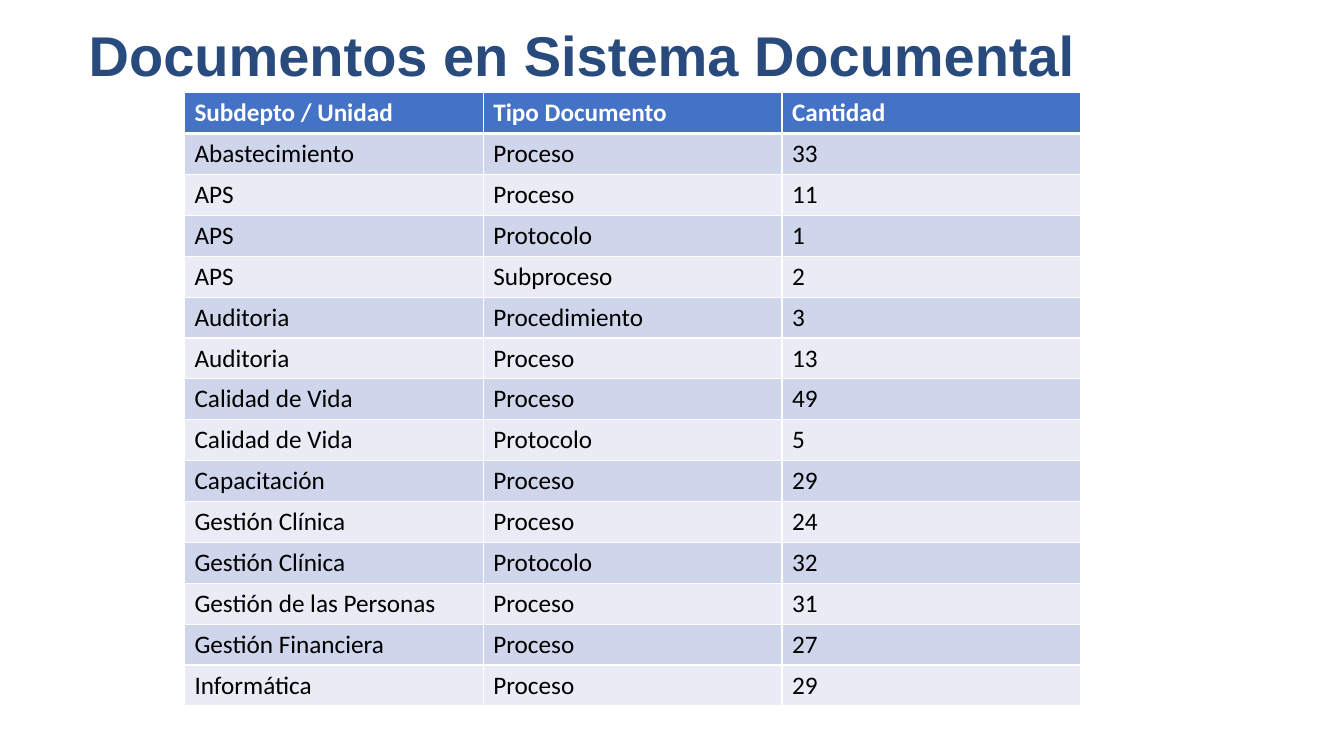
"""Build a slide with a table of documents per unit and type."""
from lxml import etree
from pptx import Presentation
from pptx.dml.color import RGBColor
from pptx.enum.text import MSO_ANCHOR, MSO_AUTO_SIZE, PP_ALIGN
from pptx.oxml.ns import qn
from pptx.util import Inches, Pt

MIDDLE, TOP = MSO_ANCHOR.MIDDLE, MSO_ANCHOR.TOP
LEFT = PP_ALIGN.LEFT
NO_AUTOFIT = MSO_AUTO_SIZE.NONE
HEADER_FILL = "4472C4"
BAND_FILLS = ["E9EBF5", "CFD5EA"]
DOCUMENTS = [
    ("Subdepto / Unidad", "Tipo Documento", "Cantidad"),
    ("Abastecimiento", "Proceso", "33"),
    ("APS", "Proceso", "11"),
    ("APS", "Protocolo", "1"),
    ("APS", "Subproceso", "2"),
    ("Auditoria", "Procedimiento", "3"),
    ("Auditoria", "Proceso", "13"),
    ("Calidad de Vida", "Proceso", "49"),
    ("Calidad de Vida", "Protocolo", "5"),
    ("Capacitación", "Proceso", "29"),
    ("Gestión Clínica", "Proceso", "24"),
    ("Gestión Clínica", "Protocolo", "32"),
    ("Gestión de las Personas", "Proceso", "31"),
    ("Gestión Financiera", "Proceso", "27"),
    ("Informática", "Proceso", "29"),
]


def style_font(font, name, size, color, bold):
    font.name, font.size, font.bold = name, Pt(size), bold
    font.color.rgb = RGBColor.from_string(color)


def add_borders(cell, widths):
    properties = cell._tc.get_or_add_tcPr()
    for position, (side, width) in enumerate(widths.items()):
        line = etree.Element(qn(f"a:ln{side}"), w=str(Pt(width)))
        fill = etree.SubElement(line, qn("a:solidFill"))
        etree.SubElement(fill, qn("a:srgbClr"), val="FFFFFF")
        properties.insert(position, line)


prs = Presentation()
prs.slide_width, prs.slide_height = Inches(13.33), Inches(7.5)
slide = prs.slides.add_slide(prs.slide_layouts[5])

title = slide.shapes.title
title.left, title.top = Inches(0.78), Inches(0)
title.width, title.height = Inches(12.01), Inches(1.45)
heading = title.text_frame
heading.text = "Documentos en Sistema Documental"
heading.auto_size = NO_AUTOFIT
heading.vertical_anchor = MIDDLE
heading.margin_bottom = Inches(0.42)
heading.paragraphs[0].alignment = LEFT
style_font(heading.paragraphs[0].runs[0].font, "Arial", 40, "284A7C", True)

table = slide.shapes.add_table(
    len(DOCUMENTS), 3, Inches(1.83), Inches(0.92), Inches(8.89), Inches(6.08)
).table
for row, record in enumerate(DOCUMENTS):
    is_header = row == 0
    for column, value in enumerate(record):
        cell = table.cell(row, column)
        cell.text_frame.text = value
        cell.vertical_anchor = TOP if is_header else MIDDLE
        cell.fill.solid()
        cell.fill.fore_color.rgb = RGBColor.from_string(
            HEADER_FILL if is_header else BAND_FILLS[row % 2])
        style_font(cell.text_frame.paragraphs[0].runs[0].font, "Calibri", 18,
                   "FFFFFF" if is_header else "000000", is_header)
        add_borders(cell, {"L": 1, "R": 1, "T": 3 if row == 1 else 1,
                           "B": 3 if is_header else 1})

prs.save("out.pptx")
